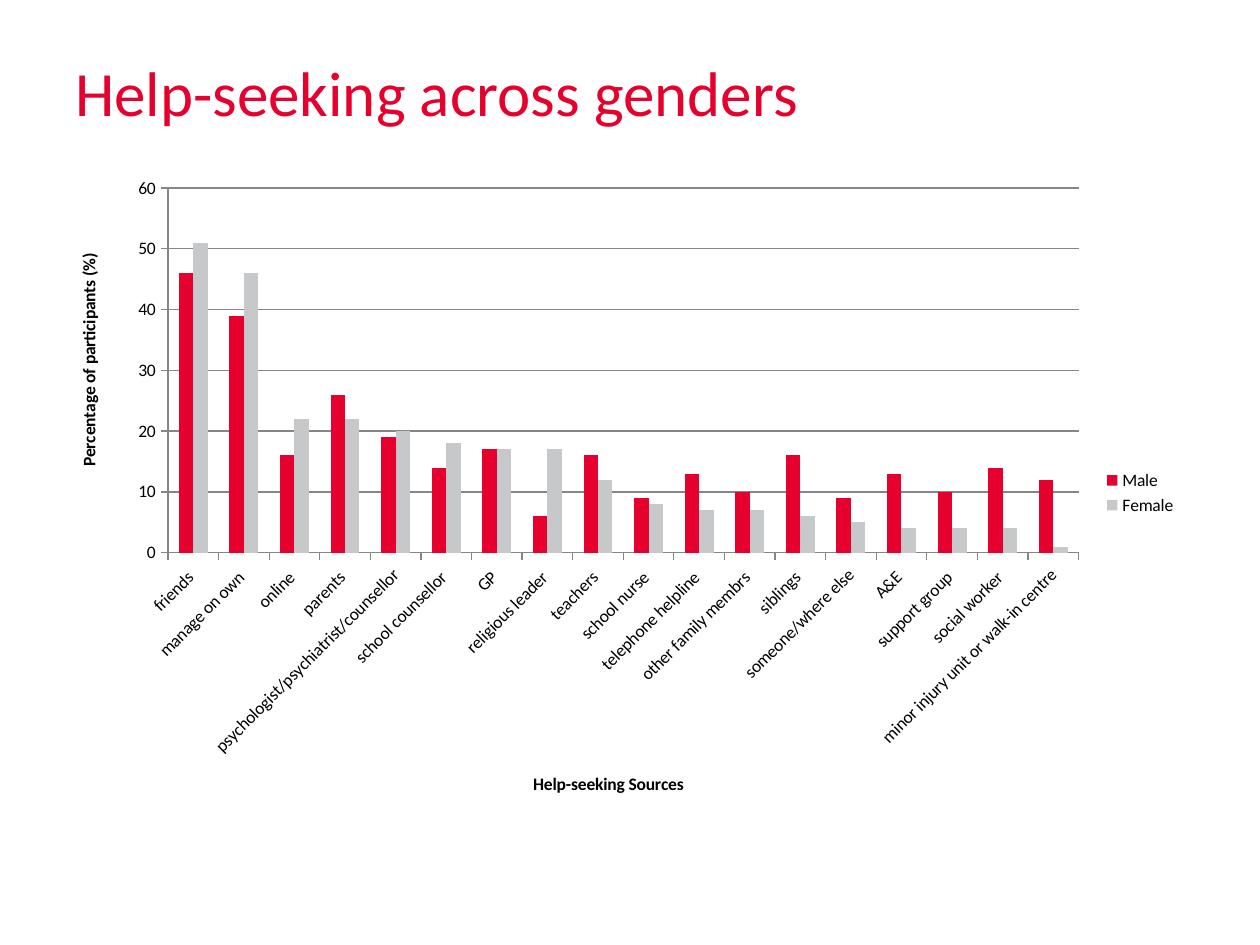
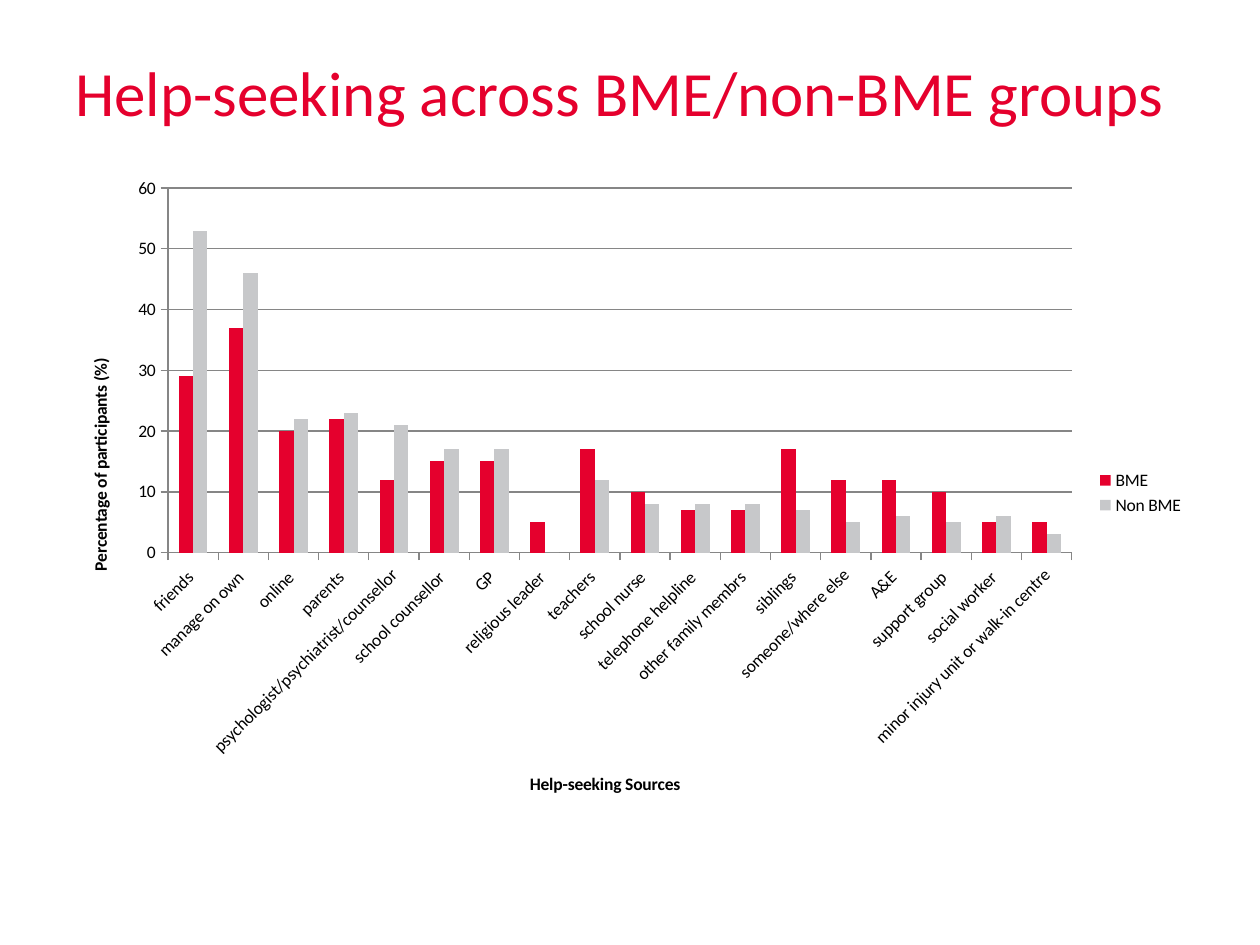
from lxml import etree
from pptx import Presentation
from pptx.chart import data
from pptx.dml import color
from pptx.enum import chart as ch, text
from pptx.oxml import ns
from pptx.util import Cm, Pt

RED, GREY, LINE, BLACK = "E5002D", "C7C8CA", "868686", "000000"
SOURCES = [
    "friends ", "manage on own ", "online ", "parents ",
    "psychologist/psychiatrist/counsellor", "school counsellor ", "GP ",
    "religious leader ", "teachers ", "school nurse ", "telephone helpline ",
    "other family membrs ", "siblings ", "someone/where else", "A&E ",
    "support group ", "social worker ", "minor injury unit or walk-in centre",
]
SLIDES = [
    ("Help-seeking across genders", (0.01, 0.13), {
        "Male ": [46, 39, 16, 26, 19, 14, 17, 6, 16,
                  9, 13, 10, 16, 9, 13, 10, 14, 12],
        "Female  ": [51, 46, 22, 22, 20, 18, 17, 17, 12,
                     8, 7, 7, 6, 5, 4, 4, 4, 1],
    }),
    ("Help-seeking across BME/non-BME groups", (0.02, 0.29), {
        "BME": [29, 37, 20, 22, 12, 15, 15, 5, 17,
                10, 7, 7, 17, 12, 12, 10, 5, 5],
        "Non BME": [53, 46, 22, 23, 21, 17, 17, 0, 12,
                    8, 8, 8, 7, 5, 6, 5, 6, 3],
    }),
]


def rgb(code):
    """Turn a hex string into a colour."""
    return color.RGBColor.from_string(code)


def assign(item, **values):
    """Set each named attribute of an item."""
    for name, value in values.items():
        setattr(item, name, value)


def place(label, spot):
    """Put an axis title at a spot given in fractions of the chart."""
    layout = label._element.find(ns.qn("c:layout"))
    manual = etree.SubElement(layout, ns.qn("c:manualLayout"))
    for name in ("xMode", "yMode"):
        etree.SubElement(manual, ns.qn(f"c:{name}")).set("val", "edge")
    for name, value in zip("xy", spot):
        etree.SubElement(manual, ns.qn(f"c:{name}")).set("val", str(value))


class Deck:
    """Hold the shared style and the current slide."""

    def __init__(self):
        """Start an empty deck."""
        self.show = Presentation()
        assign(self.show, slide_width=Cm(25.4), slide_height=Cm(19.05))
        self.left, self.width = Cm(1.27), Cm(22.86)
        self.slide = None

    def page(self):
        """Add a blank slide and make it current."""
        self.slide = self.show.slides.add_slide(self.show.slide_layouts[6])

    def font(self, font, size, code=BLACK, bold=False):
        """Apply the deck's typeface to a font."""
        assign(font, name="Calibri", size=Pt(size), bold=bold)
        font.color.rgb = rgb(code)

    def title(self, words):
        """Add the slide title."""
        box = self.slide.shapes.add_textbox(
            self.left, Cm(0.76), self.width, Cm(2.16))
        frame = box.text_frame
        assign(frame, word_wrap=True, text=words,
               vertical_anchor=text.MSO_ANCHOR.MIDDLE)
        self.font(frame.paragraphs[0].runs[0].font, 36, RED)

    def axis(self, axis, words, turn=0):
        """Style an axis and give it a turned title."""
        axis.format.line.color.rgb = rgb(LINE)
        axis.major_tick_mark = ch.XL_TICK_MARK.OUTSIDE
        self.font(axis.tick_labels.font, 10)
        frame = axis.axis_title.text_frame
        frame.text = words
        self.font(frame.paragraphs[0].runs[0].font, 10, bold=True)
        body = frame._txBody.bodyPr
        body.set("rot", str(turn * 60000))
        body.set("vert", "horz")

    def chart(self, groups, spot):
        """Add a clustered column chart of the help sources."""
        table = data.CategoryChartData()
        table.categories = SOURCES
        for name, values in groups.items():
            table.add_series(name, values)
        chart = self.slide.shapes.add_chart(
            ch.XL_CHART_TYPE.COLUMN_CLUSTERED, self.left, Cm(3.33),
            self.width, Cm(13.21), table).chart
        assign(chart, has_title=False, has_legend=True)
        self.font(chart.font, 10)
        assign(chart.legend, include_in_layout=False,
               position=ch.XL_LEGEND_POSITION.RIGHT)
        self.font(chart.legend.font, 10)
        plot = chart.plots[0]
        assign(plot, gap_width=150, overlap=0, vary_by_categories=False)
        for series, code in zip(plot.series, (RED, GREY)):
            series.format.fill.solid()
            series.format.fill.fore_color.rgb = rgb(code)
        cats, vals = chart.category_axis, chart.value_axis
        self.axis(cats, "Help-seeking Sources")
        self.axis(vals, "Percentage of participants (%)", -90)
        place(vals.axis_title, spot)
        labels = cats._element.find(ns.qn("c:txPr"))
        labels.find(ns.qn("a:bodyPr")).set("rot", str(-45 * 60000))
        assign(vals, minimum_scale=0, maximum_scale=60, major_unit=10,
               has_major_gridlines=True)
        vals.major_gridlines.format.line.color.rgb = rgb(LINE)


def main():
    """Build and save the deck."""
    deck = Deck()
    for words, spot, groups in SLIDES:
        deck.page()
        deck.title(words)
        deck.chart(groups, spot)
    deck.show.save("out.pptx")


if __name__ == "__main__":
    main()
